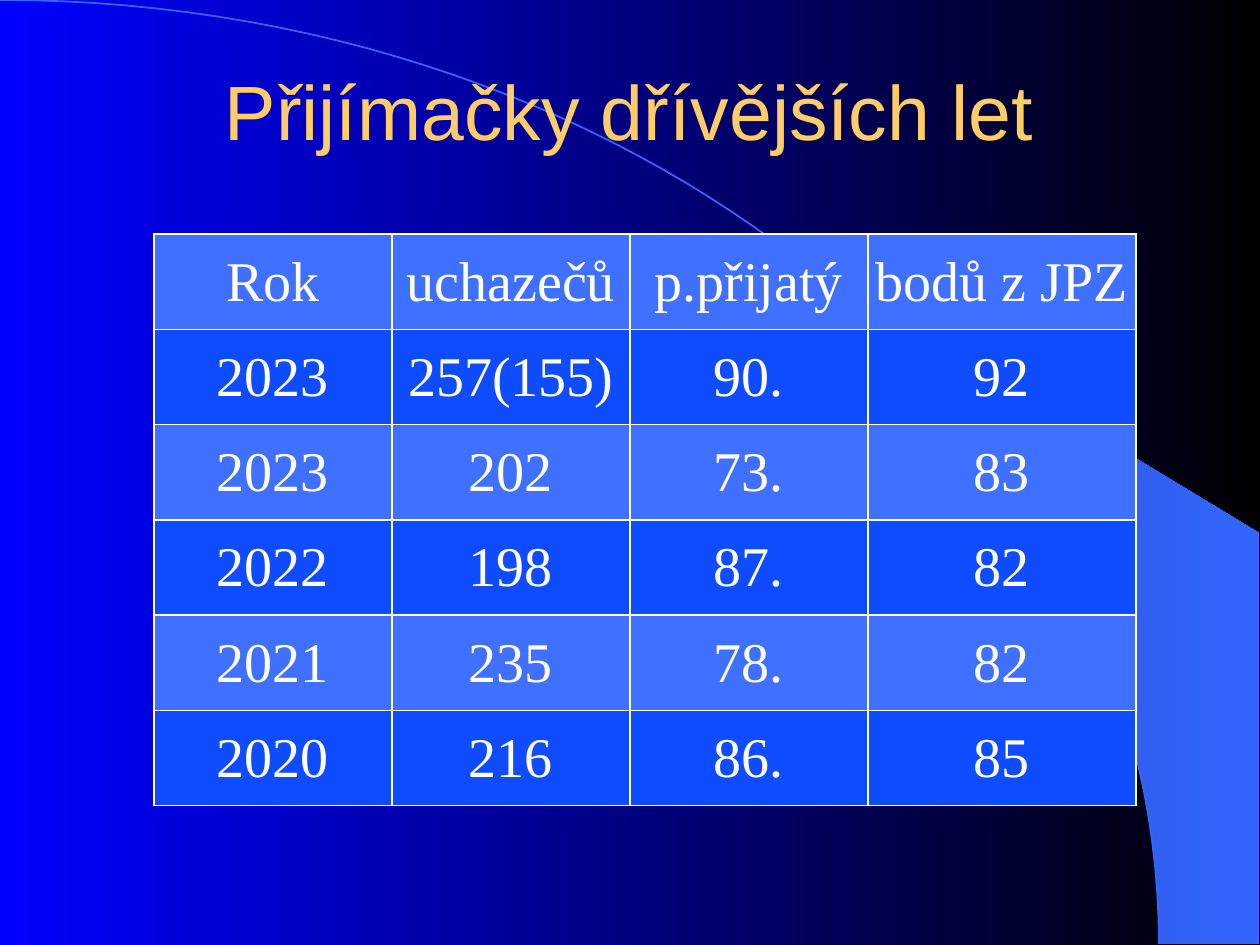
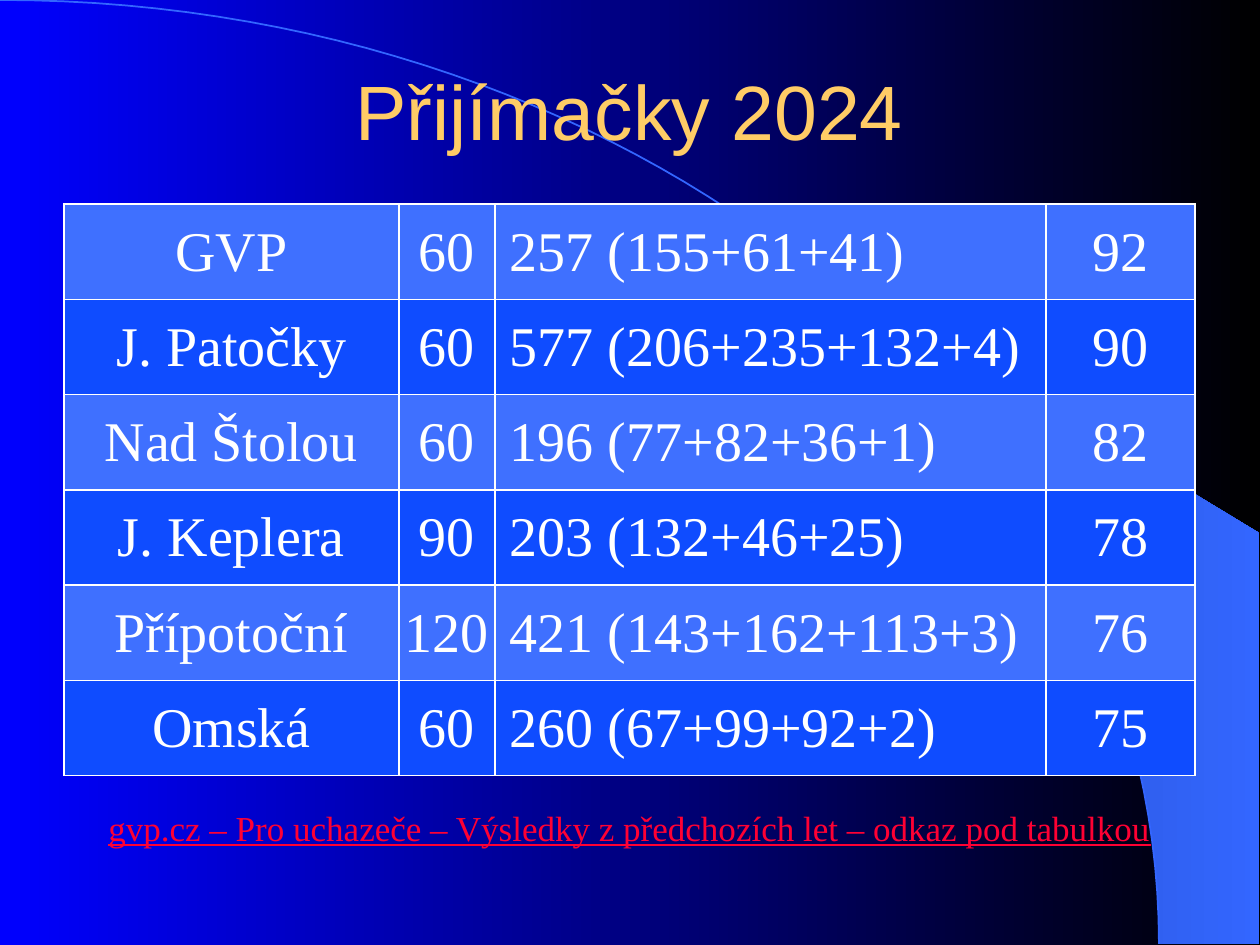
from dataclasses import dataclass

from lxml import etree
from pptx import Presentation
from pptx import util as u
from pptx.dml.color import RGBColor
from pptx.enum import text
from pptx.oxml import ns

CENTER, LEFT = text.PP_ALIGN.CENTER, text.PP_ALIGN.LEFT

SLIDES = [
    {
        "title": "Přijímačky dřívějších let",
        "corner": (154, 234),
        "columns": [(238, CENTER), (238, CENTER), (238, CENTER), (268, CENTER)],
        "rows": [
            ("Rok", "uchazečů", "p.přijatý", "bodů z JPZ"),
            ("2023", "257(155)", "90.", "92"),
            ("2023", "202", "73.", "83"),
            ("2022", "198", "87.", "82"),
            ("2021", "235", "78.", "82"),
            ("2020", "216", "86.", "85"),
        ],
    },
    {
        "title": "Přijímačky 2024",
        "corner": (64, 204),
        "columns": [(335, CENTER), (96, CENTER), (551, LEFT), (149, CENTER)],
        "rows": [
            ("GVP", "60", "257 (155+61+41)", "92"),
            ("J. Patočky", "60", "577 (206+235+132+4)", "90"),
            ("Nad Štolou", "60", "196 (77+82+36+1)", "82"),
            ("J. Keplera", "90", "203 (132+46+25)", "78"),
            ("Přípotoční", "120", "421 (143+162+113+3)", "76"),
            ("Omská", "60", "260 (67+99+92+2)", "75"),
        ],
        "source": "gvp.cz – Pro uchazeče – Výsledky z předchozích let – odkaz pod tabulkou",
    },
]


@dataclass(frozen=True)
class Theme:
    background: tuple = ("0000FF", "000000")
    wedge: tuple = ("2449B6", "3366FF")
    arc: str = "3366FF"
    title: str = "FFCC66"
    cell_text: str = "FFFFFF"
    border: str = "FFFFFF"
    bands: tuple = ("3F70FF", "0F4CFF")
    source: str = "FF0033"
    title_font: str = "Arial"
    body_font: str = "Times New Roman"
    title_size: int = 44
    cell_size: int = 32
    source_size: int = 20
    line_width: int = 1


THEME = Theme()
EMU_PER_PX = 914400 / 126
SLIDE_SIZE = (1260, 945)
TITLE_BOX = (94, 45, 1071, 129)
SOURCE_BOX = (64, 800, 1131, 55)
TABLE_HEIGHT = 572
CELL_INSET, LEFT_INSET = 1, 15
ARC_CONTROLS = ((0, 0), (640, 0), (1159, 422), (1159, 944))
ARC_STEPS = 60
WEDGE_START_X = 742
WEDGE_CORNERS = [(1259, 944), (1259, 533)]


def px(*lengths):
    return [u.Emu(round(length * EMU_PER_PX)) for length in lengths]


def style(paragraph, font_name, size, color, align=CENTER):
    paragraph.alignment = align
    for run in paragraph.runs:
        run.font.name = font_name
        run.font.size = u.Pt(size)
        run.font.color.rgb = RGBColor.from_string(color)


def fill_gradient(fill, colors):
    """Fill from left to right."""
    fill.gradient()
    fill.gradient_angle = 0
    for position, (stop, color) in enumerate(zip(fill.gradient_stops, colors)):
        stop.position = position
        stop.color.rgb = RGBColor.from_string(color)


def arc_points():
    (x0, y0), (x1, y1), (x2, y2), (x3, y3) = ARC_CONTROLS
    points = []
    for step in range(ARC_STEPS + 1):
        t = step / ARC_STEPS
        a, b, c, d = (1 - t) ** 3, 3 * t * (1 - t) ** 2, 3 * t * t * (1 - t), t ** 3
        points.append((a * x0 + b * x1 + c * x2 + d * x3,
                       a * y0 + b * y1 + c * y2 + d * y3))
    return points


def draw_outline(slide, points, close):
    start, *rest = [px(*point) for point in points]
    builder = slide.shapes.build_freeform(*start)
    builder.add_line_segments(rest, close=close)
    outline = builder.convert_to_shape()
    outline.shadow.inherit = False
    return outline


def decorate_layout(layout, slide):
    """Draw the wedge and the arc on the slide, then move them to its layout."""
    for placeholder in list(layout.placeholders)[1:]:
        layout.shapes.element.remove(placeholder.element)
    curve = arc_points()
    edge = [point for point in curve if point[0] >= WEDGE_START_X]

    wedge = draw_outline(slide, edge + WEDGE_CORNERS, close=True)
    fill_gradient(wedge.fill, THEME.wedge)
    wedge.line.fill.background()

    arc = draw_outline(slide, curve, close=False)
    arc.fill.background()
    arc.line.color.rgb = RGBColor.from_string(THEME.arc)
    arc.line.width = u.Pt(THEME.line_width)

    for index, shape in enumerate((wedge, arc), start=2):
        layout.shapes.element.insert(index, shape.element)


def add_borders(cell):
    properties = cell._tc.get_or_add_tcPr()
    for index, side in enumerate(("a:lnL", "a:lnR", "a:lnT", "a:lnB")):
        line = etree.Element(ns.qn(side), w=str(u.Pt(THEME.line_width)))
        fill = etree.SubElement(line, ns.qn("a:solidFill"))
        etree.SubElement(fill, ns.qn("a:srgbClr"), val=THEME.border)
        properties.insert(index, line)


def add_results(slide, corner, columns, rows):
    width = sum(column_width for column_width, _ in columns)
    frame = slide.shapes.add_table(len(rows), len(columns), *px(*corner, width, TABLE_HEIGHT))
    results = frame.table
    results.first_row = results.horz_banding = False
    for column, (column_width, _) in zip(results.columns, columns):
        column.width, = px(column_width)
    for r, values in enumerate(rows):
        results.rows[r].height, = px(TABLE_HEIGHT / len(rows))
        for c, (value, (_, align)) in enumerate(zip(values, columns)):
            cell = results.cell(r, c)
            cell.text_frame.text = value
            style(cell.text_frame.paragraphs[0], THEME.body_font,
                  THEME.cell_size, THEME.cell_text, align)
            cell.vertical_anchor = text.MSO_ANCHOR.MIDDLE
            left_inset = LEFT_INSET if align == LEFT else CELL_INSET
            cell.margin_left, cell.margin_right, cell.margin_top, cell.margin_bottom = px(
                left_inset, CELL_INSET, CELL_INSET, 0)
            cell.fill.solid()
            cell.fill.fore_color.rgb = RGBColor.from_string(THEME.bands[r % 2])
            add_borders(cell)


def set_title(slide, wording):
    title = slide.shapes.title
    title.left, title.top, title.width, title.height = px(*TITLE_BOX)
    title.text_frame.text = wording
    title.text_frame.auto_size = text.MSO_AUTO_SIZE.NONE
    title.text_frame.vertical_anchor = text.MSO_ANCHOR.MIDDLE
    style(title.text_frame.paragraphs[0], THEME.title_font, THEME.title_size, THEME.title)


def add_source(slide, wording):
    frame = slide.shapes.add_textbox(*px(*SOURCE_BOX)).text_frame
    frame.word_wrap = True
    frame.text = wording
    source = frame.paragraphs[0]
    style(source, THEME.body_font, THEME.source_size, THEME.source)
    source.runs[0].font.underline = True


def main():
    prs = Presentation()
    prs.slide_width, prs.slide_height = px(*SLIDE_SIZE)
    fill_gradient(prs.slide_master.background.fill, THEME.background)
    title_only = prs.slide_layouts.get_by_name("Title Only")
    for number, content in enumerate(SLIDES):
        slide = prs.slides.add_slide(title_only)
        if number == 0:
            decorate_layout(title_only, slide)
        set_title(slide, content["title"])
        add_results(slide, content["corner"], content["columns"], content["rows"])
        if "source" in content:
            add_source(slide, content["source"])
    prs.save("out.pptx")


if __name__ == "__main__":
    main()
